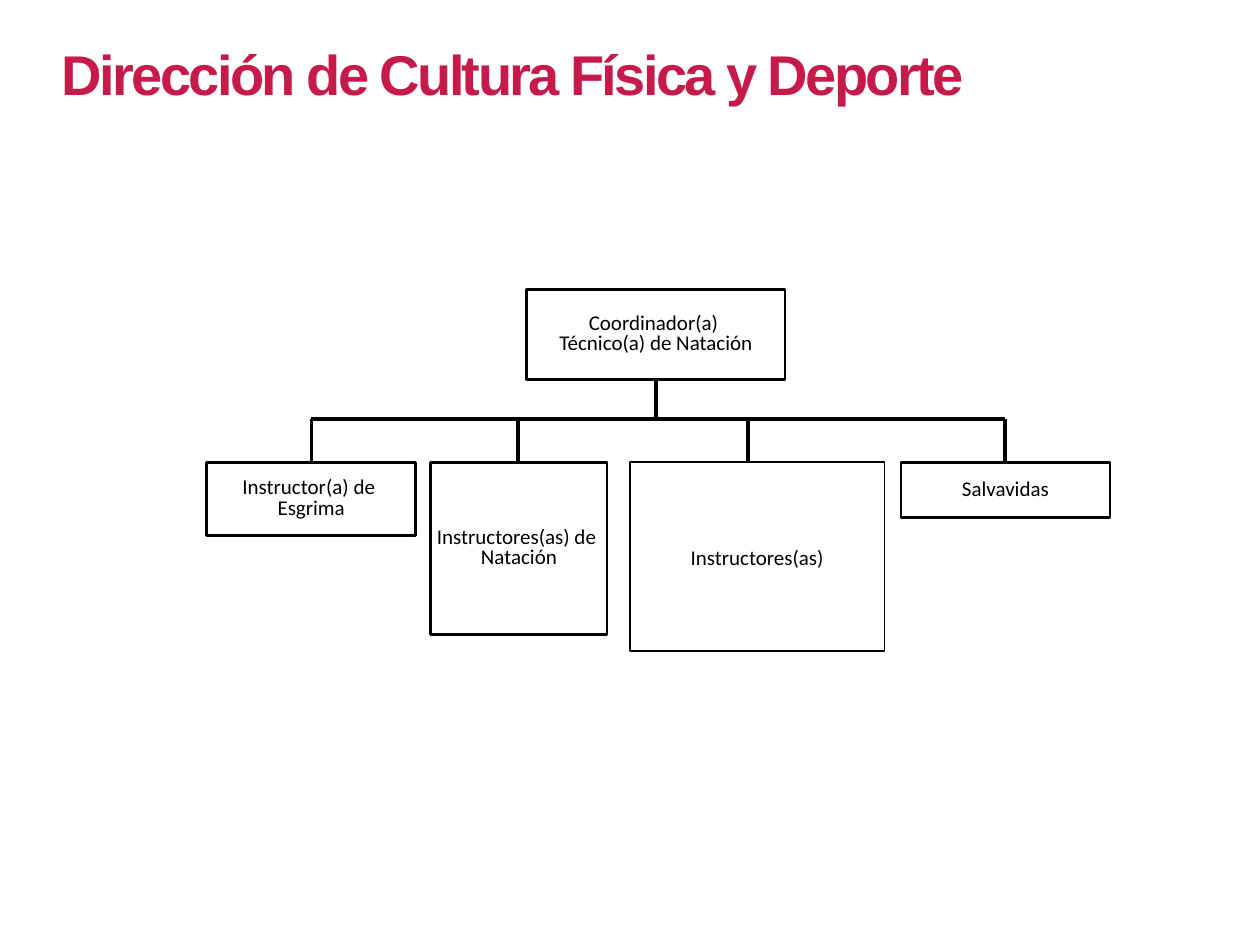
from pptx import Presentation
from pptx.dml.color import RGBColor
from pptx.enum.shapes import MSO_CONNECTOR as Connector, MSO_SHAPE as Shape
from pptx.enum.text import MSO_ANCHOR as Anchor, MSO_AUTO_SIZE as AutoSize, PP_ALIGN as Align
from pptx.util import Pt
from lxml.etree import SubElement
from pptx.oxml.ns import qn

TITLE = "Dirección de Cultura Física y Deporte"
BOSS = (["Coordinador(a) ", "Técnico(a) de Natación"], 301, 147.6, 51.1, 1.5)
STAFF_TOP = 264.2
BUS_Y = 239.6
STAFF = [
    (["Instructor(a) de ", "Esgrima"], 118.1, 119.5, 41.8, 1.5, 178),
    (["Instructores(as) de ", "Natación"], 246.2, 100.8, 98.6, 1.5, 295.9),
    (["Instructores(as)"], 360, 145.4, 108, 1, 427.7),
    (["Salvavidas"], 514.8, 119.5, 31.7, 1.5, 574.4),
]

BLACK = RGBColor(0x00, 0x00, 0x00)
WHITE = RGBColor(0xFF, 0xFF, 0xFF)
CRIMSON = RGBColor(0xC5, 0x1A, 0x4A)


def add_title(slide):
    title = slide.shapes.title
    title.left, title.top, title.width, title.height = Pt(28.1), Pt(18.7), Pt(553.7), Pt(46.1)
    frame = title.text_frame
    frame.vertical_anchor = Anchor.TOP
    frame.auto_size = AutoSize.SHAPE_TO_FIT_TEXT
    paragraph = frame.paragraphs[0]
    paragraph.alignment = Align.LEFT
    run = paragraph.add_run()
    run.text = TITLE
    run.font.name, run.font.size, run.font.bold = "Arial", Pt(32), True
    run.font.color.rgb = CRIMSON
    run._r.get_or_add_rPr().set("spc", "-150")


def add_line(slide, x1, y1, x2, y2):
    line = slide.shapes.add_connector(Connector.STRAIGHT, Pt(x1), Pt(y1), Pt(x2), Pt(y2))
    line.line.color.rgb = BLACK
    line.line.width = Pt(2.25)
    SubElement(line._element.spPr, qn("a:effectLst"))


def add_box(slide, lines, left, top, width, height, border):
    box = slide.shapes.add_shape(Shape.RECTANGLE, Pt(left), Pt(top), Pt(width), Pt(height))
    box.shadow.inherit = False
    box.fill.solid()
    box.fill.fore_color.rgb = WHITE
    box.line.color.rgb = BLACK
    box.line.width = Pt(border)
    frame = box.text_frame
    frame.word_wrap = False
    frame.vertical_anchor = Anchor.MIDDLE
    for index, text in enumerate(lines):
        paragraph = frame.add_paragraph() if index else frame.paragraphs[0]
        paragraph.alignment = Align.CENTER
        paragraph.line_spacing = 0.8 if border > 1 else 1.0
        run = paragraph.add_run()
        run.text = text
        run.font.name, run.font.size = "Calibri", Pt(12)
        run.font.color.rgb = BLACK


def main():
    presentation = Presentation()
    presentation.slide_width, presentation.slide_height = Pt(720), Pt(540)
    slide = presentation.slides.add_slide(presentation.slide_layouts[5])
    add_title(slide)

    lines, left, width, height, border = BOSS
    top = 165.6
    center = left + width / 2
    add_line(slide, center, top + height, center, BUS_Y)
    add_box(slide, lines, left, top, width, height, border)

    add_line(slide, STAFF[0][-1], BUS_Y, STAFF[-1][-1], BUS_Y)
    for lines, left, width, height, border, drop in STAFF:
        add_line(slide, drop, BUS_Y, drop, STAFF_TOP)
        add_box(slide, lines, left, STAFF_TOP, width, height, border)

    presentation.save("out.pptx")


if __name__ == "__main__":
    main()
